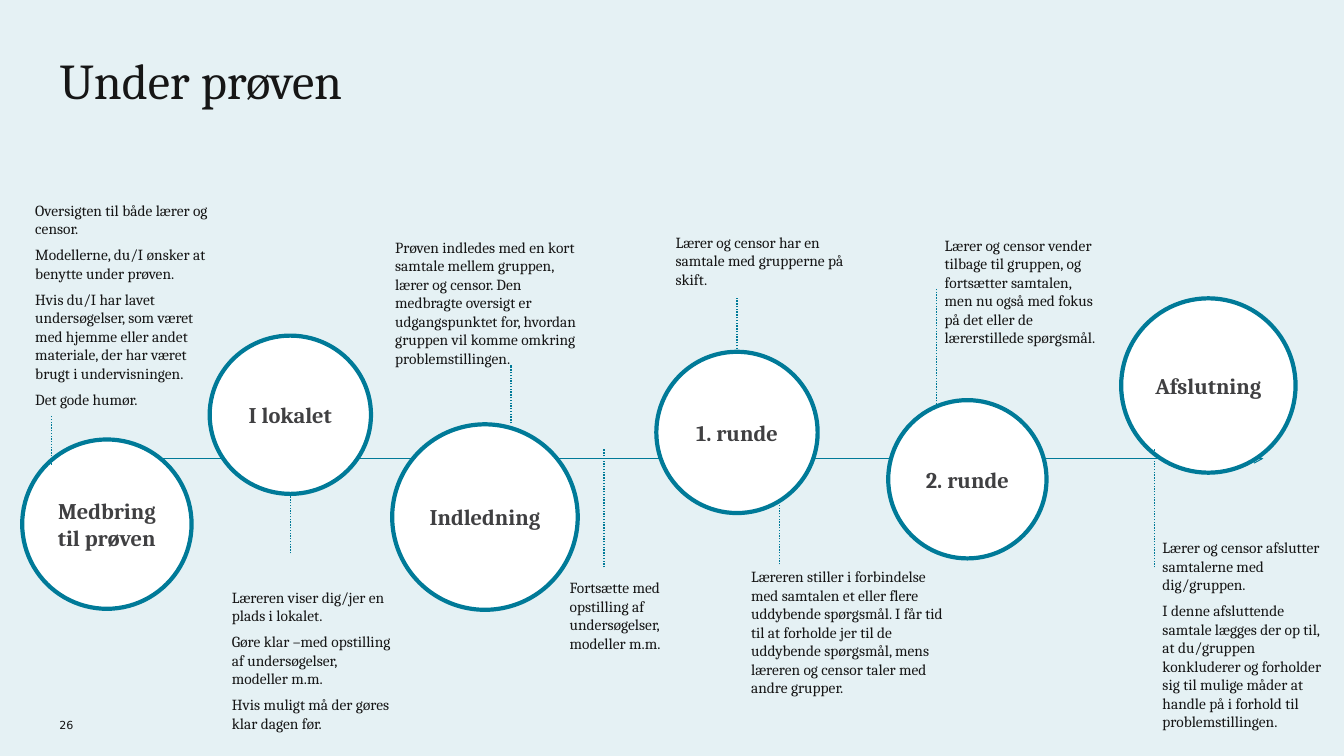
import pptx
import pptx.util
import pptx.dml.color
import pptx.enum.dml
import pptx.enum.shapes
import pptx.enum.text
import pptx.oxml
from pptx.util import Inches, Pt

COLORS = {"back": "E5F1F4", "ink": "161616", "label": "404042",
          "teal": "007A98", "white": "FFFFFF"}
SERIF = "Cambria"
ALIGN = pptx.enum.text.PP_ALIGN
ANCHOR = pptx.enum.text.MSO_ANCHOR

# label, left, top, width, height
STEPS = [
    ("Medbring til prøven", 0.22, 4.36, 1.68, 1.68),
    ("Indledning", 3.89, 4.21, 1.84, 1.84),
    ("1. runde", 6.51, 3.49, 1.6, 1.6),
    ("2. runde", 8.81, 3.97, 1.57, 1.57),
    ("I lokalet", 2.08, 3.33, 1.6, 1.57),
    ("Afslutning", 11.12, 2.96, 1.73, 1.73),
]

# left, top, width, height, paragraphs
NOTES = [
    (0.35, 1.99, 1.86, 2.12, [
        "Oversigten til både lærer og censor.",
        "Modellerne, du/I ønsker at benytte under prøven.",
        "Hvis du/I har lavet undersøgelser, som været med hjemme eller andet "
        "materiale, der har været brugt i undervisningen.",
        "Det gode humør."]),
    (2.3, 5.83, 1.6, 1.45, [
        "Læreren viser dig/jer en plads i lokalet.",
        "Gøre klar –med opstilling af undersøgelser, modeller m.m.",
        "Hvis muligt må der gøres klar dagen før."]),
    (3.92, 2.36, 1.86, 1.29, [
        "Prøven indledes med en kort samtale mellem gruppen, lærer og censor. "
        "Den medbragte oversigt er udgangspunktet for, hvordan gruppen vil "
        "komme omkring problemstillingen."]),
    (9.37, 2.34, 1.56, 1.1, [
        "Lærer og censor vender tilbage til gruppen, og fortsætter samtalen, "
        "men nu også med fokus på det eller de lærerstillede spørgsmål."]),
    (11.53, 5.34, 1.6, 1.92, [
        "Lærer og censor afslutter samtalerne med dig/gruppen.",
        "I denne afsluttende samtale lægges der op til, at du/gruppen "
        "konkluderer og forholder sig til mulige måder at handle på i forhold "
        "til problemstillingen."]),
    (5.65, 5.74, 1.41, 0.74, [
        "Fortsætte med opstilling af undersøgelser, modeller m.m."]),
    (6.7, 2.31, 1.75, 0.55, [
        "Lærer og censor har en samtale med grupperne på skift."]),
    (7.45, 5.63, 1.93, 1.63, [
        "Læreren stiller i forbindelse med samtalen et eller flere uddybende "
        "spørgsmål. I får tid til at forholde jer til de uddybende spørgsmål, "
        "mens læreren og censor taler med andre grupper."]),
]

# x, lower end, upper end
LEADS = [(0.51, 4.61, 4.12), (2.88, 5.49, 4.9), (5.07, 4.2, 3.62),
         (9.29, 4.01, 2.86), (5.99, 5.63, 4.45), (11.45, 5.63, 4.45),
         (7.31, 3.49, 2.96), (7.73, 5.6, 4.98)]


def color(name):
    return pptx.dml.color.RGBColor.from_string(COLORS[name])


def style(par, size, tone, face=SERIF, bold=False, align=ALIGN.LEFT):
    par.alignment = align
    font = par.font
    font.name, font.size, font.bold = face, Pt(size), bold
    font.color.rgb = color(tone)


def setup(frame, anchor, pad=0):
    """Wrap the text, with no side insets and pad above and below."""
    frame.word_wrap = True
    frame.auto_size = pptx.enum.text.MSO_AUTO_SIZE.NONE
    frame.vertical_anchor = anchor
    frame.margin_left = frame.margin_right = 0
    frame.margin_top = frame.margin_bottom = Inches(pad)


def add_title(slide, text):
    title = slide.shapes.title
    title.left, title.top = Inches(0.59), Inches(0.59)
    title.width, title.height = Inches(10.13), Inches(1.02)
    setup(title.text_frame, ANCHOR.TOP)
    title.text_frame.text = text
    par = title.text_frame.paragraphs[0]
    par.line_spacing = 0.83
    style(par, 35.8, "ink")


def add_text(slide, box, texts, size=11, face=SERIF, anchor=ANCHOR.TOP):
    frame = slide.shapes.add_textbox(*map(Inches, box)).text_frame
    setup(frame, anchor)
    frame.text = "\n".join(texts)
    for i, par in enumerate(frame.paragraphs):
        if i:
            par.space_before = Pt(5.5)
        style(par, size, "ink", face)


def add_step(slide, label, *box):
    disc = slide.shapes.add_shape(
        pptx.enum.shapes.MSO_SHAPE.OVAL, *map(Inches, box))
    disc.shadow.inherit = False
    disc.fill.solid()
    disc.fill.fore_color.rgb = color("white")
    disc.line.color.rgb = color("teal")
    disc.line.width = Pt(3)
    setup(disc.text_frame, ANCHOR.MIDDLE, 0.12)
    disc.text_frame.text = label
    style(disc.text_frame.paragraphs[0], 16, "label", bold=True,
          align=ALIGN.CENTER)


def add_line(slide, ends, width):
    link = slide.shapes.add_connector(
        pptx.enum.shapes.MSO_CONNECTOR.STRAIGHT, *map(Inches, ends))
    link.line.color.rgb = color("teal")
    link.line.width = Pt(width)
    props = link._element.spPr
    props.append(props.makeelement(pptx.oxml.ns.qn("a:effectLst"), {}))
    return link.line


def add_axis(slide):
    line = add_line(slide, (1.5, 4.55, 12.53, 4.55), 0.75)
    stroke = line._get_or_add_ln()
    stroke.append(stroke.makeelement(
        pptx.oxml.ns.qn("a:tailEnd"), {"type": "arrow"}))


def add_lead(slide, x, low, high):
    line = add_line(slide, (x, low, x, high), 1)
    line.dash_style = pptx.enum.dml.MSO_LINE.ROUND_DOT


def main():
    deck = pptx.Presentation()
    deck.slide_width, deck.slide_height = Inches(13.33), Inches(7.5)
    slide = deck.slides.add_slide(deck.slide_layouts[5])
    slide.background.fill.solid()
    slide.background.fill.fore_color.rgb = color("back")

    add_title(slide, "Under prøven")
    add_text(slide, (0.59, 7.06, 0.3, 0.2), ["26"], 7.9, "DejaVu Sans",
             ANCHOR.BOTTOM)
    add_axis(slide)
    for step in STEPS:
        add_step(slide, *step)
    for lead in LEADS:
        add_lead(slide, *lead)
    for *box, texts in NOTES:
        add_text(slide, box, texts)
    deck.save("out.pptx")


if __name__ == "__main__":
    main()
